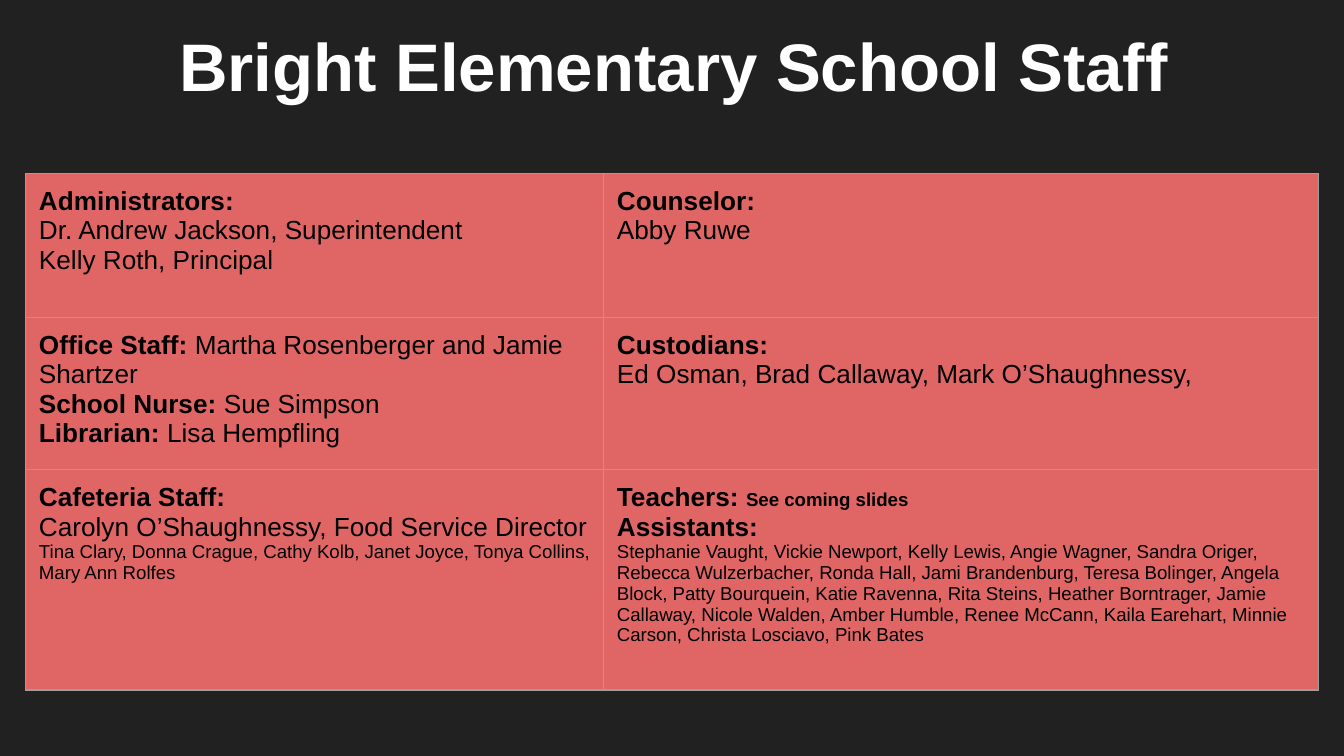
import pptx
import pptx.util
import pptx.dml.color
import pptx.enum.text
import pptx.oxml
import pptx.oxml.ns
from lxml import etree

Inches = pptx.util.Inches
Pt = pptx.util.Pt

TITLE = "Bright Elementary School Staff"
HEADING = (14, True)
BODY = (14, False)
NOTE = (10, True)
SMALL = (10, False)

STAFF = [
    [
        [
            [("Administrators:", HEADING)],
            [("Dr. Andrew Jackson, Superintendent", BODY)],
            [("Kelly Roth, Principal", BODY)],
        ],
        [
            [("Counselor:", HEADING)],
            [("Abby Ruwe", BODY)],
        ],
    ],
    [
        [
            [("Office Staff: ", HEADING), ("Martha Rosenberger and Jamie Shartzer", BODY)],
            [("School Nurse: ", HEADING), ("Sue Simpson", BODY)],
            [("Librarian:", HEADING), (" Lisa Hempfling", BODY)],
        ],
        [
            [("Custodians:", HEADING)],
            [("Ed Osman, Brad Callaway, Mark O’Shaughnessy,", BODY)],
        ],
    ],
    [
        [
            [("Cafeteria Staff:", HEADING)],
            [("Carolyn O’Shaughnessy, Food Service Director", BODY)],
            [("Tina Clary, Donna Crague, Cathy Kolb, Janet Joyce, Tonya Collins, "
              "Mary Ann Rolfes", SMALL)],
        ],
        [
            [("Teachers: ", HEADING), ("See coming slides", NOTE)],
            [("Assistants:", HEADING)],
            [("Stephanie Vaught, Vickie Newport, Kelly Lewis, Angie Wagner, Sandra Origer, "
              "Rebecca Wulzerbacher, Ronda Hall, Jami Brandenburg, Teresa Bolinger, "
              "Angela Block, Patty Bourquein, Katie Ravenna, Rita Steins, "
              "Heather Borntrager, Jamie Callaway, Nicole Walden, Amber Humble, "
              "Renee McCann, Kaila Earehart, Minnie Carson, Christa Losciavo, "
              "Pink Bates", SMALL)],
        ],
    ],
]
COLUMN_WIDTHS = [4.3, 5.32]
ROW_HEIGHTS = [1.07, 1.07, 1.64]
INSET = Inches(0.1)


def rgb(value):
    return pptx.dml.color.RGBColor.from_string(value)


def paint(fill, color):
    fill.solid()
    fill.fore_color.rgb = rgb(color)


def add_run(paragraph, text, size, bold, color):
    run = paragraph.add_run()
    run.text = text
    run.font.name = "Arial"
    run.font.size = Pt(size)
    run.font.bold = bold
    run.font.color.rgb = rgb(color)


def set_insets(frame):
    frame.margin_left = frame.margin_right = INSET
    frame.margin_top = frame.margin_bottom = INSET


def add_borders(cell, color, width):
    properties = cell._tc.get_or_add_tcPr()
    for position, side in enumerate(("lnL", "lnR", "lnT", "lnB")):
        line = etree.Element(pptx.oxml.ns.qn("a:" + side), w=str(Pt(width)))
        fill = etree.SubElement(line, pptx.oxml.ns.qn("a:solidFill"))
        etree.SubElement(fill, pptx.oxml.ns.qn("a:srgbClr"), val=color)
        properties.insert(position, line)


def fill_cell(cell, paragraphs):
    set_insets(cell)
    paint(cell.fill, "E06666")
    add_borders(cell, "9E9E9E", 0.75)
    frame = cell.text_frame
    for index, runs in enumerate(paragraphs):
        paragraph = frame.add_paragraph() if index else frame.paragraphs[0]
        for text, (size, bold) in runs:
            add_run(paragraph, text, size, bold, "000000")
        etree.SubElement(paragraph._p, pptx.oxml.ns.qn("a:endParaRPr"), sz=str(size * 100))


def add_title(slide):
    title = slide.shapes.add_textbox(Inches(0.5), Inches(0.08), Inches(9.03), Inches(0.97))
    frame = title.text_frame
    frame.word_wrap = True
    set_insets(frame)
    paragraph = frame.paragraphs[0]
    paragraph.alignment = pptx.enum.text.PP_ALIGN.CENTER
    add_run(paragraph, TITLE, 36, True, "FFFFFF")


def add_staff_table(slide):
    staff = slide.shapes.add_table(
        len(ROW_HEIGHTS), len(COLUMN_WIDTHS), Inches(0.19), Inches(1.29),
        Inches(sum(COLUMN_WIDTHS)), Inches(sum(ROW_HEIGHTS))).table
    staff.first_row = staff.horz_banding = False
    for column, width in zip(staff.columns, COLUMN_WIDTHS):
        column.width = Inches(width)
    for row, height, groups in zip(staff.rows, ROW_HEIGHTS, STAFF):
        row.height = Inches(height)
        for cell, paragraphs in zip(row.cells, groups):
            fill_cell(cell, paragraphs)


def main():
    deck = pptx.Presentation()
    deck.slide_width = Inches(10)
    deck.slide_height = deck.slide_width * 9 // 16
    slide = deck.slides.add_slide(deck.slide_layouts[6])
    paint(slide.background.fill, "212121")
    add_title(slide)
    add_staff_table(slide)
    deck.save("out.pptx")


if __name__ == "__main__":
    main()
